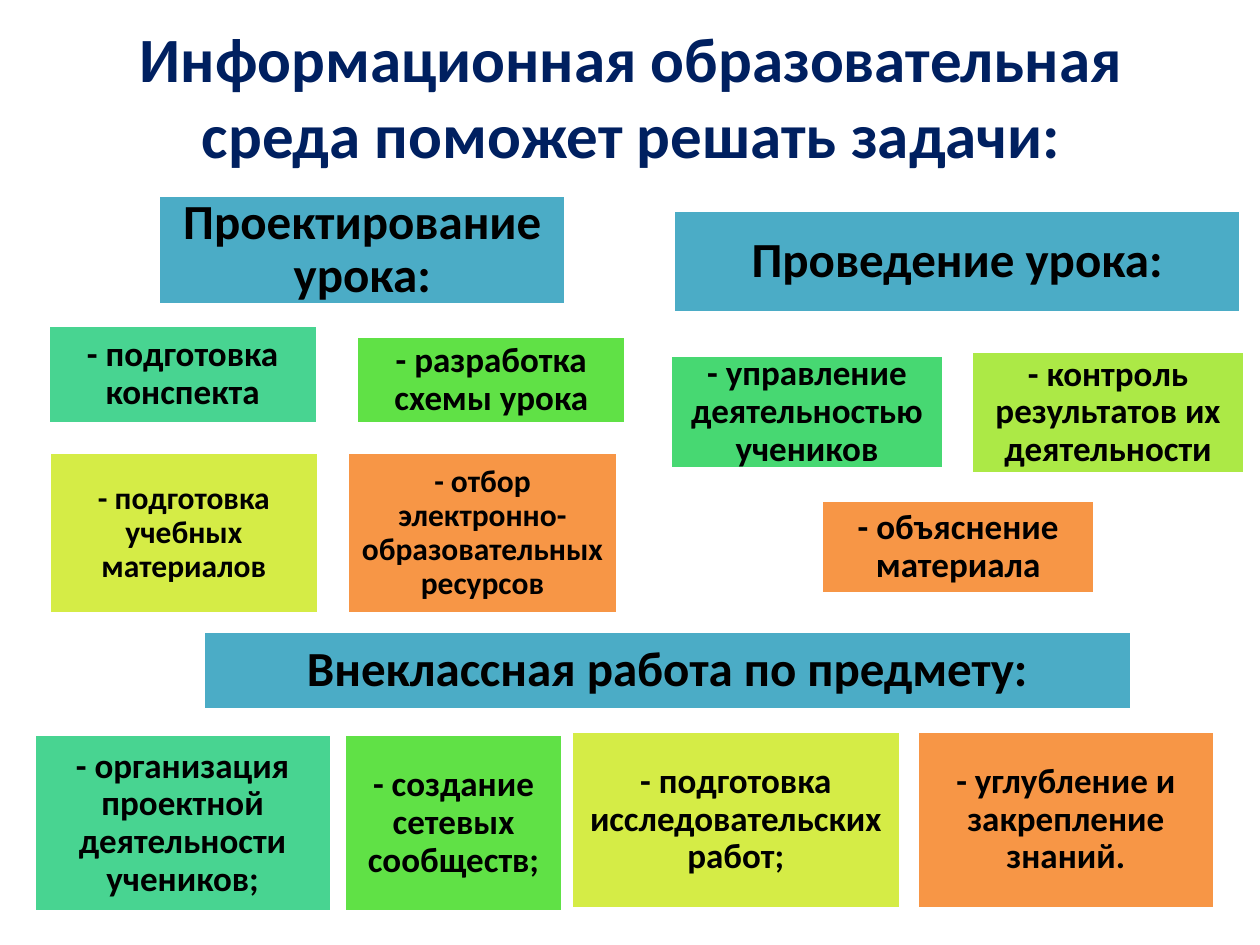
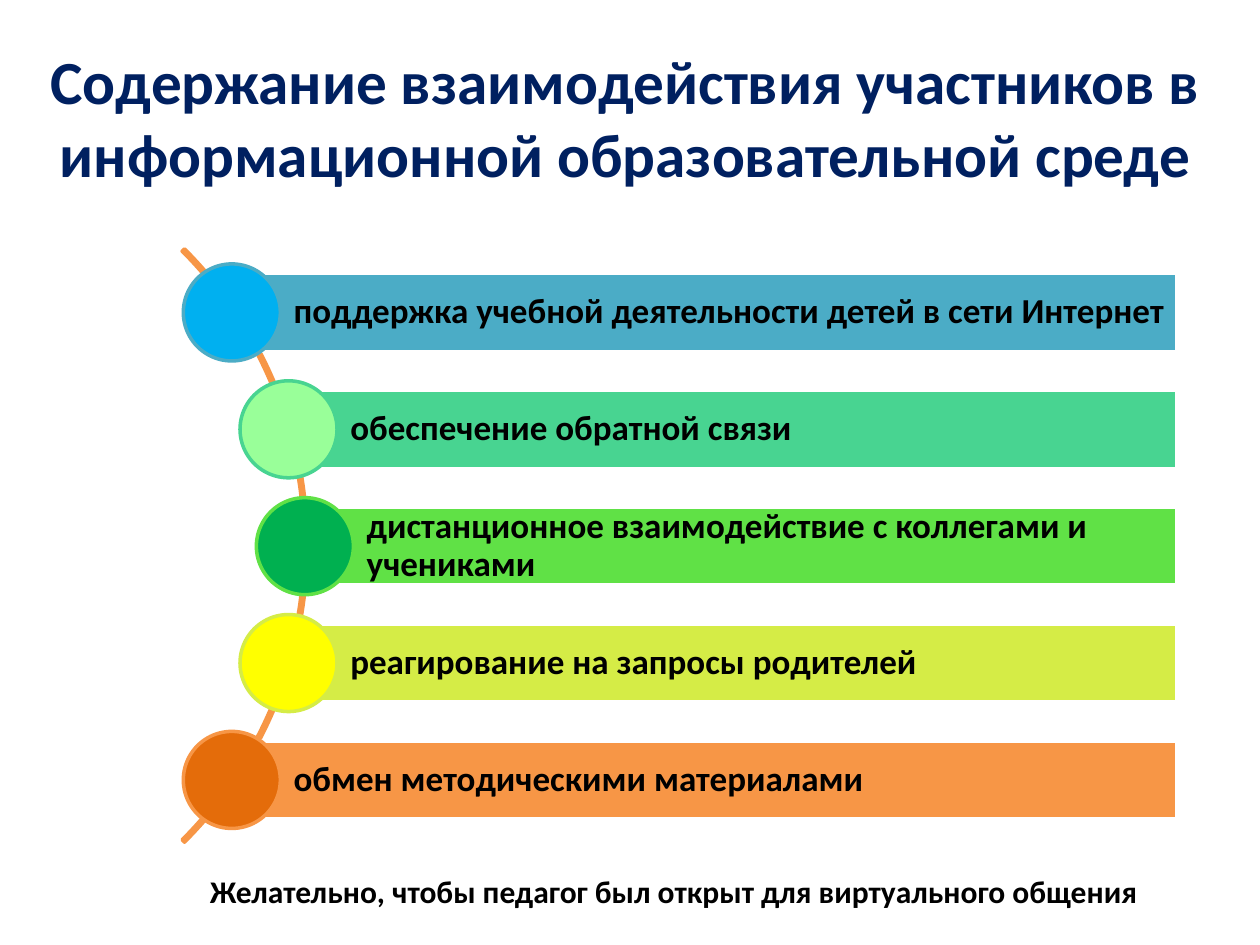
from pptx import Presentation
from pptx import util as u
from pptx.dml.color import RGBColor
from pptx.enum import shapes, text

PX = 9144  # EMU in one px, 100 px to the inch
FONT = "Calibri"
COLORS = {
    "title": "002060", "text": "000000", "white": "FFFFFF",
    "teal": "4BACC6", "mint": "48D491", "green": "60E146", "lemon": "D5EC46",
    "orange": "F79646", "emerald": "47D872", "lime": "ACE946",
    "sky": "00B0F0", "pale": "99FF99", "forest": "00B050",
    "yellow": "FFFF00", "rust": "E46C0A",
}

HEADINGS = [
    ("Проектирование урока:", (126, 155, 323, 87)),
    ("Проведение урока:", (534, 167, 451, 81)),
    ("Внеклассная работа по предмету:", (161, 501, 737, 62)),
]
TASKS = [
    ("- подготовка конспекта", (38, 258, 214, 78), "mint", 20),
    ("- разработка схемы урока", (283, 267, 214, 69), "green", 20),
    ("- подготовка учебных материалов", (39, 359, 214, 128), "lemon", 18),
    ("- отбор электронно-образовательных ресурсов", (276, 359, 214, 128), "orange", 18),
    ("- управление деятельностью учеников", (532, 282, 217, 90), "emerald", 20),
    ("- контроль результатов их деятельности", (771, 279, 217, 97), "lime", 20),
    ("- объяснение материала", (652, 397, 217, 74), "orange", 20),
    ("- организация проектной деятельности учеников;", (27, 583, 236, 141), "mint", 20),
    ("- создание сетевых сообществ;", (273, 583, 174, 141), "green", 20),
    ("- подготовка исследовательских работ;", (453, 580, 262, 141), "lemon", 20),
    ("- углубление и закрепление знаний.", (728, 580, 236, 141), "orange", 20),
]
# wording, left edge of the bar, bar colour, circle colour
INTERACTIONS = [
    ("поддержка учебной деятельности детей в сети Интернет", 184, "teal", "sky"),
    ("обеспечение обратной связи", 229, "mint", "pale"),
    ("дистанционное взаимодействие с коллегами и учениками", 242, "green", "forest"),
    ("реагирование на запросы родителей", 229, "lemon", "yellow"),
    ("обмен методическими материалами", 184, "orange", "rust"),
]
BAR_TOP, BAR_PITCH, BAR_RIGHT, BAR_HEIGHT = 217, 92.75, 934, 62
CIRCLE = 77


def rgb(name):
    return RGBColor.from_string(COLORS[name])


def emu(box):
    return [u.Emu(round(v * PX)) for v in box]


def write(sp, words, size, color="text", align=text.PP_ALIGN.CENTER,
          anchor=text.MSO_ANCHOR.MIDDLE, insets=(10, 5, 10, 5), spacing=1.0):
    """Put one bold paragraph in a shape; insets are left, top, right, bottom."""
    tf = sp.text_frame
    tf.word_wrap = True
    tf.vertical_anchor = anchor
    tf.margin_left, tf.margin_top, tf.margin_right, tf.margin_bottom = emu(insets)
    tf.text = words
    p = tf.paragraphs[0]
    p.alignment = align
    p.line_spacing = spacing
    font = p.runs[0].font
    font.name, font.size, font.bold = FONT, u.Pt(size), True
    font.color.rgb = rgb(color)


def add_preset(s, kind, box, fill, line):
    sp = s.shapes.add_shape(kind, *emu(box))
    sp.shadow.inherit = False
    if fill:
        sp.fill.solid()
        sp.fill.fore_color.rgb = rgb(fill)
    else:
        sp.fill.background()
    sp.line.color.rgb = rgb(line)
    sp.line.width = u.Pt(2)
    return sp


def add_label(s, words, box, fill, size, insets, align=text.PP_ALIGN.CENTER):
    sp = add_preset(s, shapes.MSO_SHAPE.RECTANGLE, box, fill, "white")
    write(sp, words, size, align=align, insets=insets, spacing=0.9)


def add_title(s, words, box, size):
    write(s.shapes.add_textbox(*emu(box)), words, size, "title")


def add_arc(s):
    arc = add_preset(s, shapes.MSO_SHAPE.BLOCK_ARC, (-422, 100, 666, 666), None, "orange")
    # start angle, end angle, thickness
    for i, value in enumerate((189, 27, 0.004)):
        arc.adjustments[i] = value


def add_interaction(s, row, words, left, bar, circle):
    top = BAR_TOP + row * BAR_PITCH
    add_label(s, words, (left, top, BAR_RIGHT - left, BAR_HEIGHT), bar, 20,
              (49, 6, 6, 6), text.PP_ALIGN.LEFT)
    circle_top = top + (BAR_HEIGHT - CIRCLE) / 2
    add_preset(s, shapes.MSO_SHAPE.OVAL,
               (left - CIRCLE / 2, circle_top, CIRCLE, CIRCLE), circle, bar)


def tasks_slide(s):
    add_title(s, "Информационная образовательная среда поможет решать задачи:",
              (51, 13, 900, 125), 36)
    for words, box in HEADINGS:
        add_label(s, words, box, "teal", 28, (12,) * 4)
    for words, box, fill, size in TASKS:
        add_label(s, words, box, fill, size, (8 if size == 20 else 7,) * 4)


def interaction_slide(s):
    add_title(s, "Содержание взаимодействия участников в информационной образовательной среде",
              (20, 30, 953, 125), 35)
    add_arc(s)
    for row, item in enumerate(INTERACTIONS):
        add_interaction(s, row, *item)
    note = s.shapes.add_textbox(*emu((157, 687, 819, 40)))
    write(note, "Желательно, чтобы педагог был открыт для виртуального общения", 18,
          align=text.PP_ALIGN.LEFT, anchor=text.MSO_ANCHOR.TOP)
    note.text_frame.auto_size = text.MSO_AUTO_SIZE.SHAPE_TO_FIT_TEXT


def main():
    prs = Presentation()
    prs.slide_width, prs.slide_height = emu((1000, 750))
    for build in (tasks_slide, interaction_slide):
        build(prs.slides.add_slide(prs.slide_layouts[6]))
    prs.save("out.pptx")


if __name__ == "__main__":
    main()
